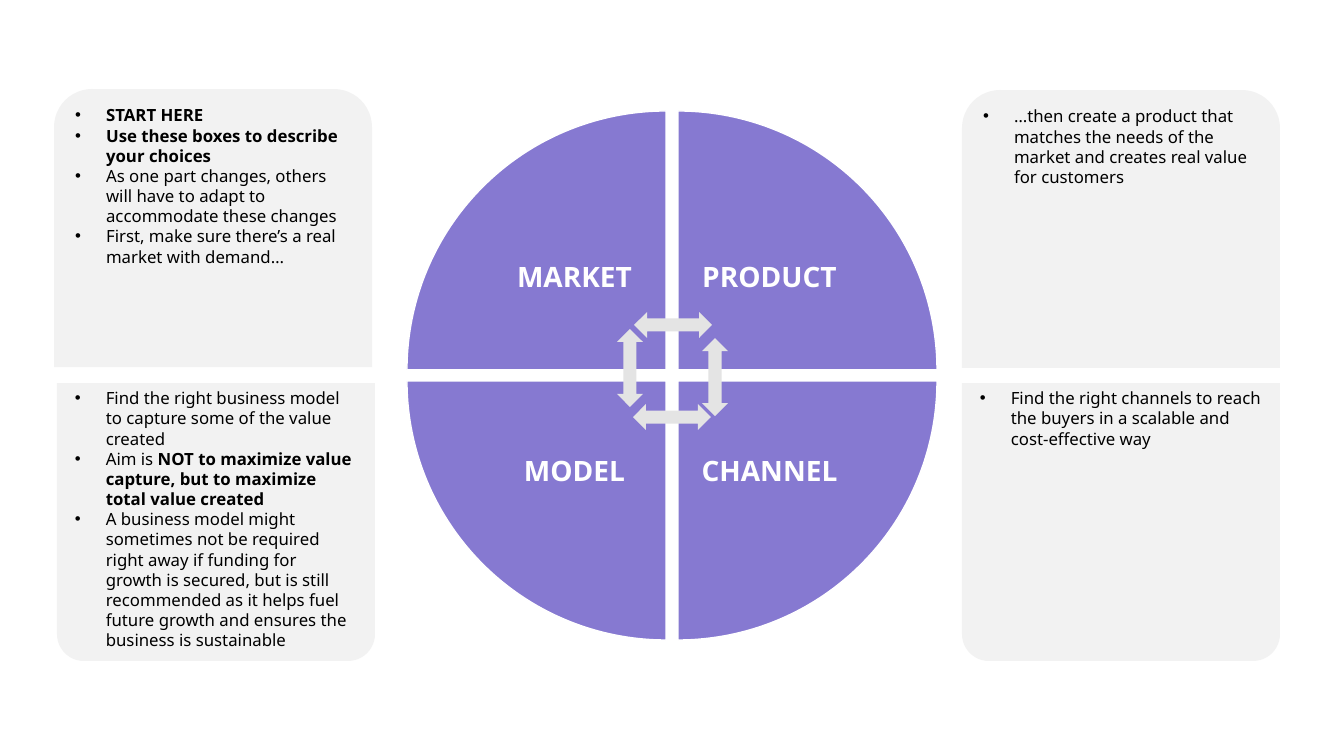
from lxml.etree import SubElement
from pptx import Presentation
from pptx.dml.color import RGBColor
from pptx.enum.shapes import MSO_SHAPE
from pptx.enum.text import MSO_ANCHOR, PP_ALIGN
from pptx.oxml.ns import qn
from pptx.util import Emu, Pt

EMU_PER_PX = 914400 / 100.8
FONT = "Noto Sans"
PURPLE, ARROW_GREY, BOX_GREY = "8679D1", "E4E4E4", "F2F2F2"
WHITE, BLACK = "FFFFFF", "000000"

WEDGE_SIZE, LABEL_SIZE = 259, 183
WEDGE_LEFTS, WEDGE_TOPS = (407, 678), (111, 381)
# label, column, row, rotation
QUADRANTS = [
    ("MARKET", 0, 0, 0),
    ("PRODUCT", 1, 0, 90),
    ("CHANNEL", 1, 1, 180),
    ("MODEL", 0, 1, 270),
]

ARROW_WIDTH, ARROW_HEIGHT = 26, 78
# left, top, rotation
ARROWS = [(660, 286, 90), (702, 338, 180), (617, 329, 0), (659, 378, 270)]

BOX_WIDTH, BOX_HEIGHT = 318, 278
TOP_CORNERS, BOTTOM_CORNERS = (0.137, 0), (0, 0.097)
# left, top, corner roundings, bullets as lists of (text, bold) runs
BOXES = [
    (57, 383, BOTTOM_CORNERS, [
        [("Find the right business model to capture some of the value created", False)],
        [("Aim is ", False),
         ("NOT to maximize value capture, but to maximize total value created", True)],
        [("A business model might sometimes not be required right away if funding for "
          "growth is secured, but is still recommended as it helps fuel future growth "
          "and ensures the business is sustainable", False)],
    ]),
    (54, 89, TOP_CORNERS, [
        [("START HERE", True)],
        [("Use these boxes to describe your choices", True)],
        [("As one part changes, others will have to adapt to accommodate these changes",
          False)],
        [("First, make sure there’s a real market with demand…", False)],
    ]),
    (962, 383, BOTTOM_CORNERS, [
        [("Find the right channels to reach the buyers in a scalable and "
          "cost-effective way", False)],
    ]),
    (962, 90, TOP_CORNERS, [
        [("…then create a product that matches the needs of the market and creates "
          "real value for customers", False)],
    ]),
]


def px(length):
    return Emu(round(length * EMU_PER_PX))


def color(hex_string):
    return RGBColor.from_string(hex_string)


def set_attributes(target, values):
    for name, value in values.items():
        setattr(target, name, value)


def add_run(paragraph, text, size, hex_color, bold):
    run = paragraph.add_run()
    run.text = text
    set_attributes(run.font, {"name": FONT, "size": Pt(size), "bold": bold})
    run.font.color.rgb = color(hex_color)


def add_filled_shape(slide, kind, left, top, width, height, fill, rotation=0):
    shape = slide.shapes.add_shape(kind, px(left), px(top), px(width), px(height))
    shape.rotation = rotation
    shape.shadow.inherit = False
    shape.fill.solid()
    shape.fill.fore_color.rgb = color(fill)
    shape.line.fill.background()
    return shape


def add_quadrant(slide, label, column, row, rotation):
    """Add a wedge and its label, which sits in the corner nearest the centre."""
    left, top = WEDGE_LEFTS[column], WEDGE_TOPS[row]
    wedge = add_filled_shape(slide, MSO_SHAPE.PIE_WEDGE, left, top,
                             WEDGE_SIZE, WEDGE_SIZE, PURPLE, rotation)
    wedge.line.color.rgb = color(WHITE)
    wedge.line.width = Pt(1)

    offset = WEDGE_SIZE - LABEL_SIZE
    text_box = slide.shapes.add_textbox(
        px(left + offset * (1 - column)), px(top + offset * (1 - row)),
        px(LABEL_SIZE), px(LABEL_SIZE))
    margins = {f"margin_{side}": px(16) for side in ("left", "top", "right", "bottom")}
    set_attributes(text_box.text_frame, {
        "word_wrap": True, "vertical_anchor": MSO_ANCHOR.MIDDLE, **margins})
    paragraph = text_box.text_frame.paragraphs[0]
    set_attributes(paragraph, {"alignment": PP_ALIGN.CENTER, "line_spacing": 0.9})
    add_run(paragraph, label, 20, WHITE, True)


def add_bullet(paragraph):
    properties = paragraph._p.get_or_add_pPr()
    indent = px(31)
    properties.set("marL", str(indent))
    properties.set("indent", str(-indent))
    SubElement(properties, qn("a:buFont"), typeface="Arial")
    SubElement(properties, qn("a:buChar"), char="•")


def add_bullet_box(slide, left, top, corners, bullets):
    box = add_filled_shape(slide, MSO_SHAPE.ROUND_2_SAME_RECTANGLE, left, top,
                           BOX_WIDTH, BOX_HEIGHT, BOX_GREY)
    for index, rounding in enumerate(corners):
        box.adjustments[index] = rounding
    frame = box.text_frame
    set_attributes(frame, {"word_wrap": True, "vertical_anchor": MSO_ANCHOR.TOP})
    for index, runs in enumerate(bullets):
        paragraph = frame.add_paragraph() if index else frame.paragraphs[0]
        add_bullet(paragraph)
        paragraph.alignment = PP_ALIGN.LEFT
        for text, bold in runs:
            add_run(paragraph, text, 12, BLACK, bold)


def main():
    presentation = Presentation()
    set_attributes(presentation, {"slide_width": px(1344), "slide_height": px(756)})
    slide = presentation.slides.add_slide(presentation.slide_layouts[6])
    for quadrant in QUADRANTS:
        add_quadrant(slide, *quadrant)
    for left, top, rotation in ARROWS:
        add_filled_shape(slide, MSO_SHAPE.UP_DOWN_ARROW, left, top,
                         ARROW_WIDTH, ARROW_HEIGHT, ARROW_GREY, rotation)
    for box in BOXES:
        add_bullet_box(slide, *box)
    presentation.save("out.pptx")


if __name__ == "__main__":
    main()
